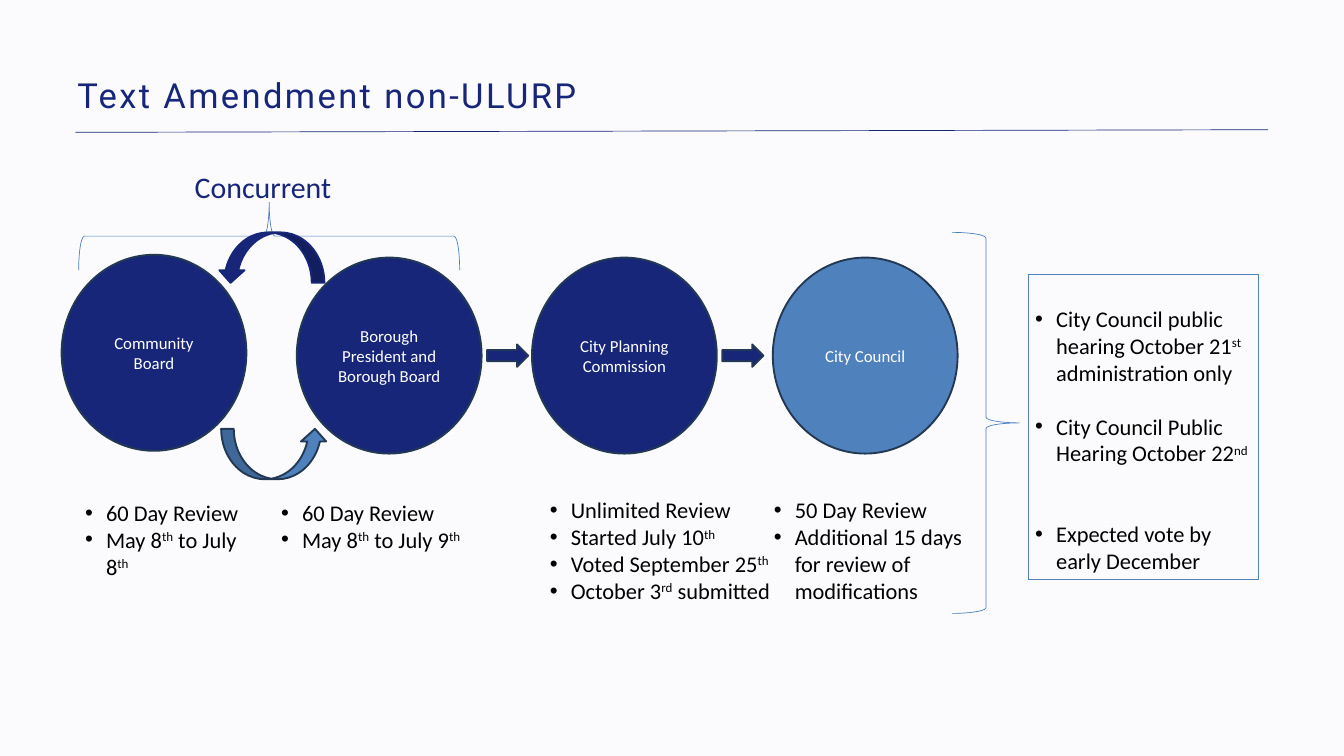
from lxml import etree
from pptx import Presentation
from pptx.dml.color import RGBColor
from pptx.enum import shapes, text
from pptx.oxml.ns import qn
from pptx.util import Pt

NAVY = RGBColor(0x17, 0x26, 0x79)
BLUE = RGBColor(0x4F, 0x81, 0xBD)
BRACE_BLUE = RGBColor(0x4B, 0x7E, 0xBC)
OUTLINE = RGBColor(0x23, 0x39, 0x53)
PAPER = RGBColor(0xFB, 0xFB, 0xFD)
WHITE = RGBColor(0xFF, 0xFF, 0xFF)
BLACK = RGBColor(0, 0, 0)

STAGES = [
    (66, 273, NAVY, "Community Board"),
    (318, 276, NAVY, "Borough President and Borough Board"),
    (570, 276, NAVY, "City Planning Commission"),
    (828, 276, BLUE, "City Council"),
]
NOTES = [
    (84, 531, 198, ["60 Day Review", "May 8^th^ to July 8^th^"]),
    (294, 531, 228, ["60 Day Review", "May 8^th^ to July 9^th^"]),
    (582, 528.5, 264, ["Unlimited Review", "Started July 10^th^",
                       "Voted September 25^th^", "October 3^rd^ submitted"]),
    (822, 528.5, 246, ["50 Day Review",
                       "Additional 15 days for review of modifications"]),
]
HEARINGS = [
    "City Council public hearing October 21^st^ administration only",
    "City Council Public Hearing October 22^nd^",
    "Expected vote by early December",
]


def write(p, content, size=24, font="Calibri", color=BLACK, align=None,
          bullet=False, before=0, spacing=None):
    """Fill a paragraph; parts between carets become superscript."""
    if bullet:
        pPr = p._p.get_or_add_pPr()
        pPr.set("marL", str(Pt(22.5)))
        pPr.set("indent", str(-Pt(22.5)))
        etree.SubElement(pPr, qn("a:buFont")).set("typeface", "Arial")
        etree.SubElement(pPr, qn("a:buChar")).set("char", "•")
    if before:
        p.space_before = Pt(before)
    p.alignment = align
    for i, part in enumerate(content.split("^")):
        if not part:
            continue
        r = p.add_run()
        r.text = part
        r.font.size, r.font.name = Pt(size), font
        r.font.color.rgb = color
        rPr = r._r.get_or_add_rPr()
        if i % 2:
            rPr.set("baseline", "30000")
        if spacing:
            rPr.set("spc", str(round(spacing * 100)))


def add_shape(s, kind, x, y, w, h, fill=None, line=OUTLINE, width=2, rotation=0):
    """Add a flat preset shape."""
    sp = s.shapes.add_shape(kind, Pt(x), Pt(y), Pt(w), Pt(h))
    sp.shadow.inherit = False
    if fill is None:
        sp.fill.background()
    else:
        sp.fill.solid()
        sp.fill.fore_color.rgb = fill
    sp.line.color.rgb = line
    sp.line.width = Pt(width)
    sp.rotation = rotation
    return sp


def add_bullets(tf, items, gaps=()):
    """Write a bulleted list, with optional space before each item."""
    tf.word_wrap = True
    tf.vertical_anchor = text.MSO_ANCHOR.TOP
    for i, item in enumerate(items):
        p = tf.paragraphs[0] if i == 0 else tf.add_paragraph()
        write(p, item, bullet=True, align=text.PP_ALIGN.LEFT,
              before=gaps[i] if gaps else 0)


def add_text_box(s, x, y, w, h):
    """Add a wrapping text box and return its frame."""
    tf = s.shapes.add_textbox(Pt(x), Pt(y), Pt(w), Pt(h)).text_frame
    tf.word_wrap = True
    return tf


def add_heading(s, x, y, w):
    """Place the title and the rule below it."""
    title = s.shapes.title
    title.left, title.top, title.width, title.height = Pt(x + 2), Pt(y), Pt(1006), Pt(47)
    tf = title.text_frame
    tf.margin_left = tf.margin_right = tf.margin_bottom = 0
    tf.margin_top = Pt(1.5)
    tf.vertical_anchor = text.MSO_ANCHOR.TOP
    write(tf.paragraphs[0], "Text Amendment non-ULURP", size=37, font="Roboto",
          color=NAVY, align=text.PP_ALIGN.LEFT, spacing=2.6)
    rule = s.shapes.add_connector(shapes.MSO_CONNECTOR.STRAIGHT,
                                  Pt(x), Pt(y + 64), Pt(x + w), Pt(y + 61.2))
    rule.line.color.rgb = NAVY
    rule.line.width = Pt(0.75)
    etree.SubElement(rule._element.spPr, qn("a:effectLst"))


def add_stage(s, x, y, fill, label):
    """Place one review stage as a labelled circle."""
    sp = add_shape(s, shapes.MSO_SHAPE.OVAL, x, y, 198, 210, fill)
    tf = sp.text_frame
    tf.word_wrap = True
    tf.vertical_anchor = text.MSO_ANCHOR.MIDDLE
    write(tf.paragraphs[0], label, size=18, color=WHITE, align=text.PP_ALIGN.CENTER)


def add_concurrent(s, x, y, w):
    """Place the concurrent label and the brace over the first two stages."""
    length, depth = 408.24, 72.72
    add_shape(s, shapes.MSO_SHAPE.RIGHT_BRACE,
              x + (length - depth) / 2, y + 39.6 - (length - depth) / 2,
              depth, length, line=BRACE_BLUE, width=0.75, rotation=270)
    tf = add_text_box(s, x + 29.5, y, w, 46)
    write(tf.paragraphs[0], "Concurrent", size=32, color=NAVY,
          align=text.PP_ALIGN.CENTER)


def add_hearings(s, x, y):
    """Place the closing brace and the box of hearing dates."""
    add_shape(s, shapes.MSO_SHAPE.RIGHT_BRACE, x, y, 72.72, 408.24,
              line=BRACE_BLUE, width=0.75)
    sp = add_shape(s, shapes.MSO_SHAPE.RECTANGLE, x + 82, y + 44.8, 246, 327,
                   line=BLUE, width=0.75)
    sp.text_frame.margin_top = Pt(32.9)
    add_bullets(sp.text_frame, HEARINGS, gaps=(0, 29, 58))


def add_flow_arrows(s):
    """Place the loop between the first stages and the arrows onward."""
    loop = shapes.MSO_SHAPE.CURVED_UP_ARROW
    add_shape(s, loop, 237, 459.5, 114, 54, BLUE)
    add_shape(s, loop, 233.5, 249, 114, 54, NAVY, line=NAVY, rotation=180)
    for x, y, *_ in STAGES[1:3]:
        add_shape(s, shapes.MSO_SHAPE.RIGHT_ARROW, x + 204, y + 93, 44, 24, NAVY)


def main():
    """Build and save the slide."""
    prs = Presentation()
    prs.slide_width, prs.slide_height = Pt(1440), Pt(810)
    s = prs.slides.add_slide(prs.slide_layouts[5])
    s.background.fill.solid()
    s.background.fill.fore_color.rgb = PAPER
    add_heading(s, 80.8, 77.8, 1278)
    for stage in STAGES:
        add_stage(s, *stage)
    for x, y, w, items in NOTES:
        add_bullets(add_text_box(s, x, y, w, 7.2 + 29 * len(items)), items)
    add_concurrent(s, 84.3, 177, 336)
    add_hearings(s, 1020, 249)
    add_flow_arrows(s)
    prs.save("out.pptx")


if __name__ == "__main__":
    main()
